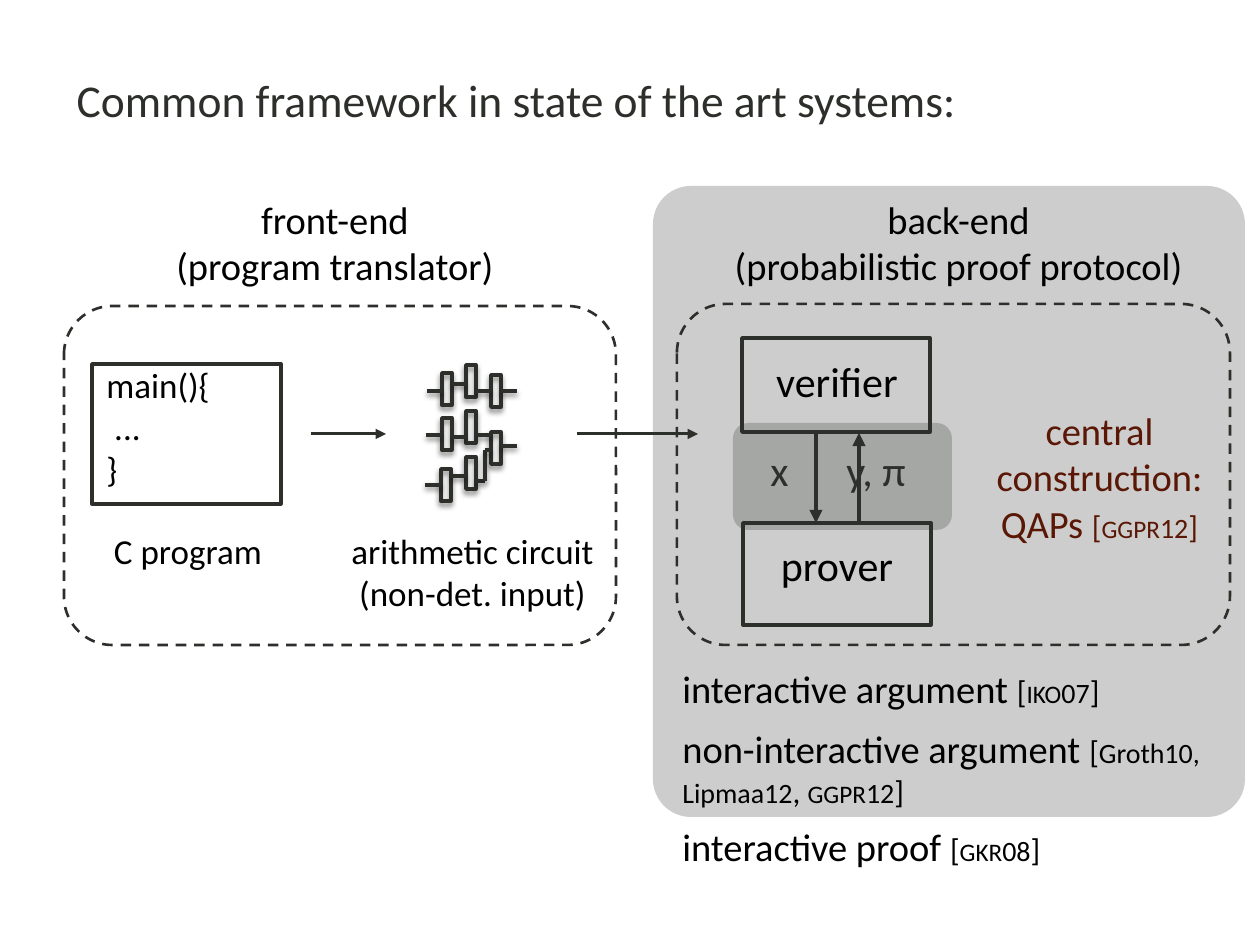
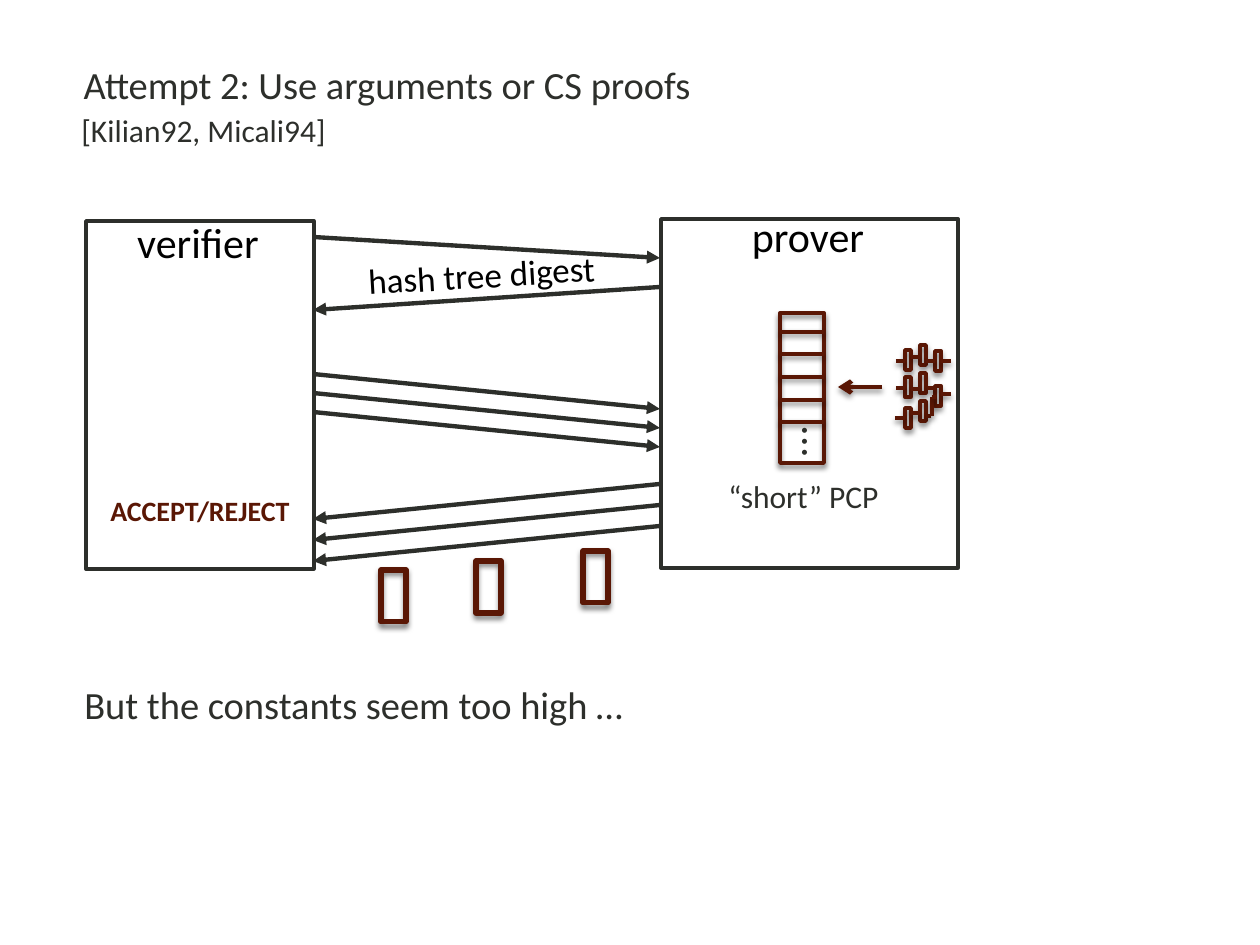
from lxml import etree
from pptx import Presentation, util as u
from pptx.dml.color import RGBColor
from pptx.enum import dml, shapes, text
from pptx.oxml.ns import qn

PX = u.Inches(1) / 126
FONT = "Calibri"
COLORS = {"ink": "2D2F2B", "accent": "5A1705", "black": "000000"}
RECT, ROUND = shapes.MSO_SHAPE.RECTANGLE, shapes.MSO_SHAPE.ROUNDED_RECTANGLE
LEFT, CENTER = text.PP_ALIGN.LEFT, text.PP_ALIGN.CENTER


def draw(slide, kind, x, y, w, h, color="ink", weight=2.0, radius=None,
         opacity=None, dash=False, tail=None, shadow=False):
    """Add a preset shape, or a line spanning (w, h) from (x, y) if kind is None."""
    if kind is None:
        item = slide.shapes.add_connector(
            shapes.MSO_CONNECTOR.STRAIGHT,
            *[round(v * PX) for v in (x, y, x + w, y + h)])
    else:
        item = slide.shapes.add_shape(kind, *[round(v * PX) for v in (x, y, w, h)])
        item.fill.background()
    if radius:
        item.adjustments[0] = radius
    rgb = RGBColor.from_string(COLORS[color])
    if opacity:
        item.fill.solid()
        item.fill.fore_color.rgb = rgb
        tint = item._element.spPr.find(".//" + qn("a:srgbClr"))
        etree.SubElement(tint, qn("a:alpha"), val=str(opacity * 1000))
        item.line.fill.background()
    else:
        item.line.color.rgb = rgb
        item.line.width = u.Pt(weight)
        if dash:
            item.line.dash_style = dml.MSO_LINE.DASH
    if tail:
        etree.SubElement(item.line._get_or_add_ln(), qn("a:tailEnd"), type=tail)
    effects = etree.SubElement(item._element.spPr, qn("a:effectLst"))
    if shadow:
        shade = etree.SubElement(
            effects, qn("a:outerShdw"), blurRad=str(u.Pt(3)), dist=str(u.Pt(2)),
            dir="5400000", algn="ctr", rotWithShape="0")
        black = etree.SubElement(shade, qn("a:srgbClr"), val=COLORS["black"])
        etree.SubElement(black, qn("a:alpha"), val="38000" if kind is None else "50000")


def write(slide, x, y, w, h, paragraphs, size, color="black", align=CENTER,
          gap=0, bold=False, title=False, turn=0):
    """Fill the title or a new text box; a run is (text, size, small caps or not)."""
    box = slide.shapes.title if title else slide.shapes.add_textbox(0, 0, 0, 0)
    box.left, box.top, box.width, box.height = [round(v * PX) for v in (x, y, w, h)]
    box.rotation = turn
    frame = box.text_frame
    frame.word_wrap = True
    frame.auto_size = text.MSO_AUTO_SIZE.NONE
    frame.vertical_anchor = text.MSO_ANCHOR.TOP
    for i, runs in enumerate(paragraphs):
        paragraph = frame.add_paragraph() if i else frame.paragraphs[0]
        paragraph.alignment = align
        paragraph.space_before = u.Pt(gap if i else 0)
        font = paragraph.font
        font.name, font.size, font.bold = FONT, u.Pt(size), bold
        font.color.rgb = RGBColor.from_string(COLORS[color])
        for words, run_size, small_caps in runs if isinstance(runs, list) else [(runs, size, False)]:
            run = paragraph.add_run()
            run.text = words
            if run_size != size:
                run.font.size = u.Pt(run_size)
            if small_caps:
                run._r.get_or_add_rPr().set("cap", "small")


prs = Presentation()
prs.slide_width, prs.slide_height = u.Inches(10), u.Inches(7.5)
framework, attempt = [prs.slides.add_slide(prs.slide_layouts[5]) for _ in range(2)]

# Slide 1: front-end and back-end
write(framework, 64, 66, 1149, 68, ["Common framework in state of the art systems:"],
      26, "ink", LEFT, title=True)
draw(framework, ROUND, 653, 186, 592, 631, radius=0.064, opacity=24)
draw(framework, ROUND, 733, 423, 219, 107, radius=0.143, opacity=24)
draw(framework, ROUND, 64, 306, 552, 339, weight=1.5, radius=0.143, dash=True)
draw(framework, ROUND, 677, 304, 553, 341, weight=1.5, radius=0.143, dash=True)
for x, y, w, h in ((92, 364, 189, 140), (742, 338, 188, 94), (743, 523, 188, 102)):
    draw(framework, RECT, x, y, w, h)

for x, y, w, h, lines, size in (
    (52, 190, 566, 106, ["front-end", "(program translator)"], 22),
    (679, 190, 559, 106, ["back-end", "(probabilistic proof protocol)"], 22),
    (89, 523, 198, 97, ["C program"], 20),
    (323, 523, 299, 140, ["arithmetic circuit", "(non-det. input)"], 20),
    (740, 349, 194, 63, ["verifier"], 24),
    (740, 533, 194, 63, ["prover"], 24),
):
    write(framework, x, y, w, h, lines, size)
write(framework, 94, 357, 174, 140, ["main(){", " ...", "}"], 20, align=LEFT)
write(framework, 717, 438, 125, 63, ["x"], 24, "ink")
write(framework, 834, 438, 135, 63, ["y, π"], 24, "ink", LEFT)

for x, y, w, h, weight in ((816, 432, 0, 91, 2.5), (859, 522, 0, -89, 2.5),
                           (311, 434, 75, 0, 1.75), (577, 434, 121, 0, 1.75)):
    draw(framework, None, x, y, w, h, weight=weight, tail="triangle")

cite = {
    name: [("[", 18, False), (name, 18, True), (year, 16, False), ("]", 18, False)]
    for name, year in (("ggpr", "12"), ("iko", "07"), ("gkr", "08"))
}
write(framework, 961, 401, 277, 152,
      [[("central construction: QAPs ", 22, False), *cite["ggpr"]]], 22, "accent")
write(framework, 670, 659, 585, 219, [
    [("interactive argument ", 22, False), *cite["iko"]],
    [("non-interactive argument ", 22, False), ("[", 18, False),
     ("Groth10, Lipmaa12", 16, False), (", ", 18, False), *cite["ggpr"][1:]],
    [("interactive proof ", 22, False), *cite["gkr"]],
], 22, align=LEFT, gap=8)

# Slide 2: messages between verifier and prover
write(attempt, 71, 55, 1177, 105, ["Attempt 2: Use arguments or CS proofs"],
      22, "ink", LEFT, title=True)
write(attempt, 69, 105, 415, 50, ["[Kilian92, Micali94]"], 18, "ink", LEFT)
draw(attempt, RECT, 86, 221, 228, 348)
draw(attempt, RECT, 661, 219, 297, 349)
write(attempt, 84, 210, 228, 63, ["verifier"], 24)
write(attempt, 660, 204, 296, 63, ["prover"], 24)
write(attempt, 261, 247, 441, 55, ["hash tree digest"], 20, turn=356.6)
write(attempt, 86, 480, 228, 89, [[("accept/reject", 20, True)]], 20, "accent", bold=True)
write(attempt, 716, 471, 204, 82, ["“short” PCP"], 18, "ink", LEFT)
write(attempt, 72, 675, 1188, 96, ["But the constants seem too high …"], 22, "ink", LEFT)

messages = [(313, 237, 347, 21), (660, 287, -347, 23)]
for i in range(3):
    messages += [(313, 374 + 19 * i, 347, 35), (660, 484 + 21 * i, -347, 35)]
for x, y, w, h in messages:
    draw(attempt, None, x, y, w, h, weight=2.5, tail="triangle")
for x, y in ((381, 570), (476, 561), (583, 551)):
    draw(attempt, RECT, x, y, 25, 52, "accent", 3, shadow=True)

draw(attempt, RECT, 780, 313, 44, 150, "accent", 2.25, shadow=True)
for i in range(5):
    draw(attempt, None, 780, round(332 + 22.5 * i), 44, 0, "accent", 2.5, shadow=True)
write(attempt, 779, 413, 71, 72, ["..."], 24, "ink", LEFT, turn=90)
draw(attempt, None, 882, 387, -44, 0, "accent", 2.5, tail="arrow", shadow=True)

# Arithmetic circuit, on both slides
gates = ((17, 8), (17, 53), (16, 104), (41, 0), (41, 46), (41, 92), (66, 10), (66, 67))
wires = ((2, 26, 15, 0), (1, 70, 15, 0), (0, 120, 16, 0),
         (27, 19, 14, 0), (27, 72, 14, 0), (26, 111, 15, 0),
         (51, 26, 15, 0), (52, 70, 14, 0), (51, 116, 9, 0),
         (60, 85, 0, 31), (60, 85, 6, 0), (76, 26, 16, 0), (76, 81, 16, 0))
for slide, left, top, scale, color in ((framework, 425, 365, 1, "ink"),
                                       (attempt, 895, 345, 0.61, "accent")):
    parts = [(RECT, x, y, 10, 32, 2) for x, y in gates]
    parts += [(None, *wire, 2.5) for wire in wires]
    for kind, x, y, w, h, weight in parts:
        x, y, w, h = [round(v * scale) for v in (x, y, w, h)]
        draw(slide, kind, left + x, top + y, w, h, color, weight, shadow=True)

prs.save("out.pptx")
